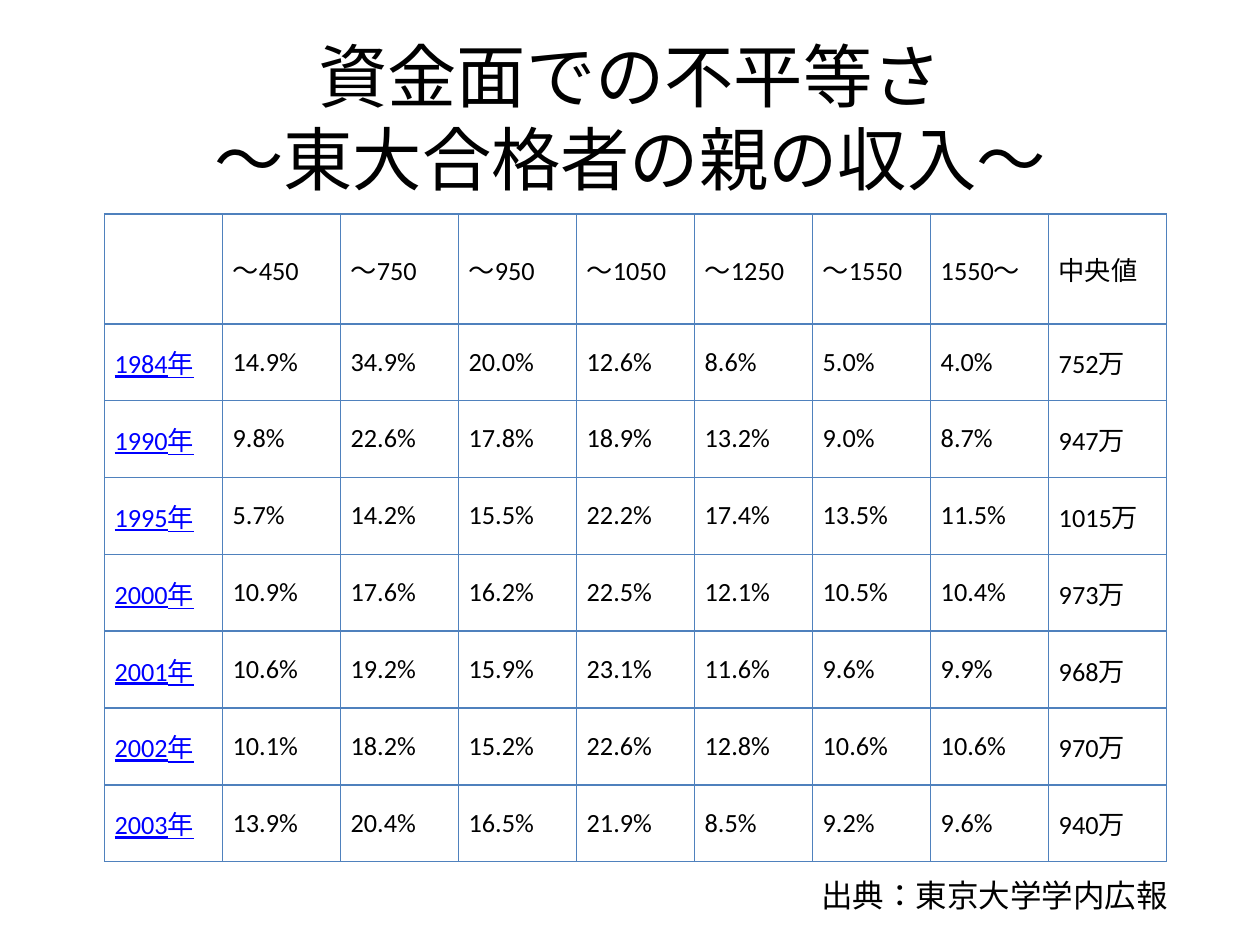
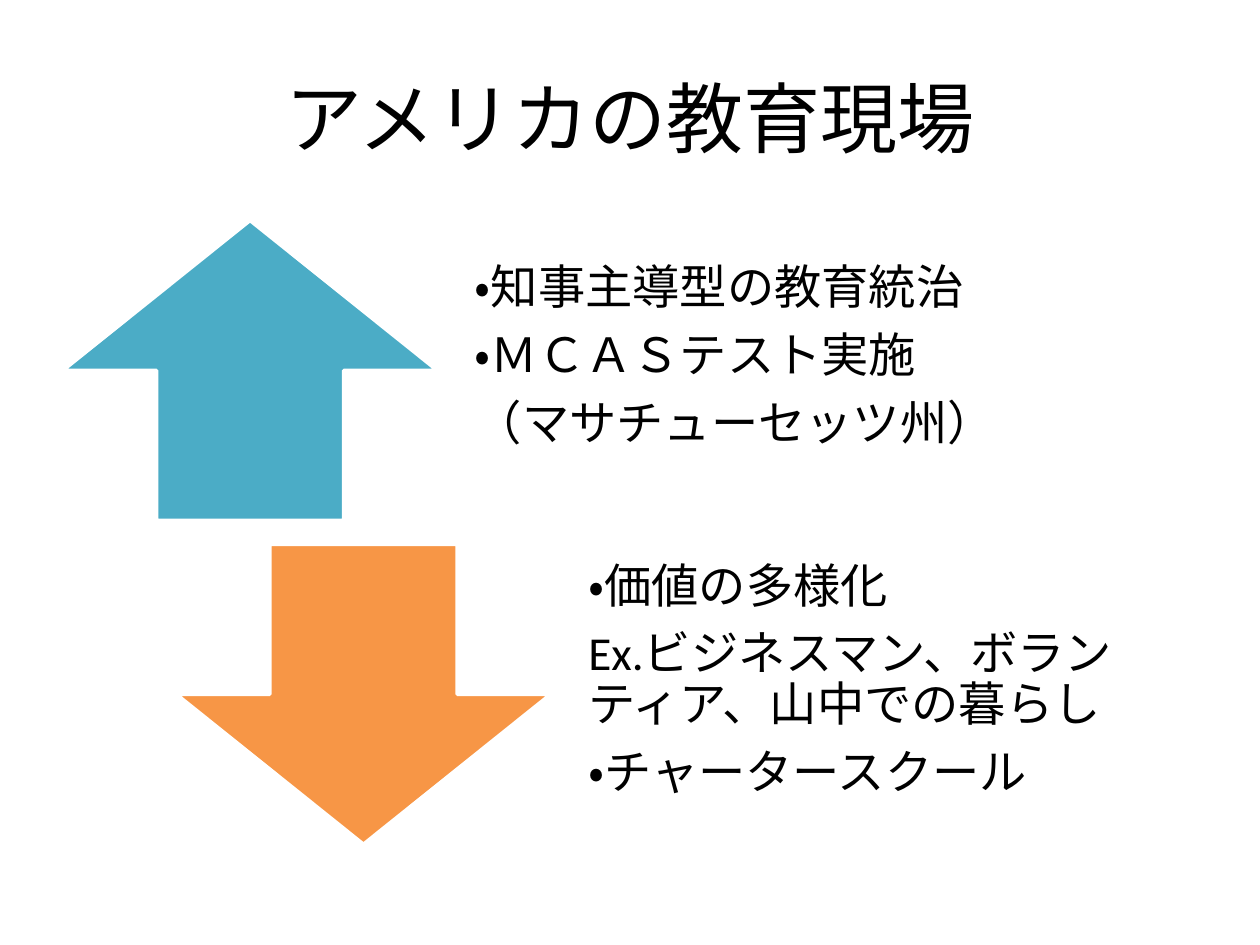
"""Build two slides on parental income and on education in the United States."""
from dataclasses import dataclass

from lxml import etree
from pptx import Presentation
from pptx import util as u
from pptx.dml.color import RGBColor
from pptx.enum import lang, shapes, text
from pptx.oxml import ns

COLORS = {
    "background": "FFFFFF",
    "text": "000000",
    "link": "0000FF",
    "grid": "4F81BD",
    "up": "4BACC6",
    "down": "F79646",
}
FONT = {"name": "Calibri", "language_id": lang.MSO_LANGUAGE_ID.JAPANESE}
CELL = {
    "vertical_anchor": text.MSO_ANCHOR.MIDDLE,
    "margin_left": u.Inches(0.08),
    "margin_right": u.Inches(0.08),
    "margin_top": u.Inches(0.04),
    "margin_bottom": u.Inches(0.04),
}
TITLE_FRAME = {"word_wrap": True, "vertical_anchor": text.MSO_ANCHOR.MIDDLE}
TITLE_PARAGRAPH = {"alignment": text.PP_ALIGN.CENTER}
POINTS_FRAME = {
    "word_wrap": True,
    "vertical_anchor": text.MSO_ANCHOR.MIDDLE,
    "margin_left": u.Inches(0.21),
    "margin_right": u.Inches(0.21),
    "margin_top": u.Inches(0),
    "margin_bottom": u.Inches(0.21),
}
POINTS_PARAGRAPH = {"line_spacing": 0.9, "space_after": u.Pt(9.45)}

INCOME = [
    ["", "～450", "～750", "～950", "～1050", "～1250", "～1550", "1550～", "中央値"],
    ["1984年", "14.9%", "34.9%", "20.0%", "12.6%", "8.6%", "5.0%", "4.0%", "752万"],
    ["1990年", "9.8%", "22.6%", "17.8%", "18.9%", "13.2%", "9.0%", "8.7%", "947万"],
    ["1995年", "5.7%", "14.2%", "15.5%", "22.2%", "17.4%", "13.5%", "11.5%", "1015万"],
    ["2000年", "10.9%", "17.6%", "16.2%", "22.5%", "12.1%", "10.5%", "10.4%", "973万"],
    ["2001年", "10.6%", "19.2%", "15.9%", "23.1%", "11.6%", "9.6%", "9.9%", "968万"],
    ["2002年", "10.1%", "18.2%", "15.2%", "22.6%", "12.8%", "10.6%", "10.6%", "970万"],
    ["2003年", "13.9%", "20.4%", "16.5%", "21.9%", "8.5%", "9.2%", "9.6%", "940万"],
]


@dataclass(frozen=True)
class Trend:
    """An arrow with the points that explain it."""

    arrow: shapes.MSO_SHAPE
    color: str
    points: list[str]


TRENDS = [
    Trend(shapes.MSO_SHAPE.UP_ARROW, "up",
          ["・知事主導型の教育統治", "・ＭＣＡＳテスト実施", "（マサチューセッツ州）"]),
    Trend(shapes.MSO_SHAPE.DOWN_ARROW, "down",
          ["・価値の多様化", "Ex.ビジネスマン、ボランティア、山中での暮らし",
           "・チャータースクール"]),
]


def rgb(color: str) -> RGBColor:
    """Look up a palette colour."""
    return RGBColor.from_string(COLORS[color])


def apply(target, values: dict) -> None:
    """Set every attribute in a dict of format values."""
    for attribute, value in values.items():
        setattr(target, attribute, value)


def write(paragraph, words: str, size: float, color: str = "text", **style) -> None:
    """Fill a paragraph and format its runs."""
    paragraph.text = words
    for run in paragraph.runs:
        apply(run.font, FONT | {"size": u.Pt(size)} | style)
        run.font.color.rgb = rgb(color)


def add_text(slide, box: tuple, lines: list[str], size: float,
             frame_format: dict, paragraph_format: dict) -> None:
    """Place a text box with one paragraph per line."""
    frame = slide.shapes.add_textbox(*map(u.Inches, box)).text_frame
    apply(frame, frame_format)
    for index, line in enumerate(lines):
        paragraph = frame.add_paragraph() if index else frame.paragraphs[0]
        apply(paragraph, paragraph_format)
        write(paragraph, line, size)


def add_titled_slide(deck, title: str, size: float):
    """Add a blank slide with the shared background and title style."""
    slide = deck.slides.add_slide(deck.slide_layouts[6])
    slide.background.fill.solid()
    slide.background.fill.fore_color.rgb = rgb("background")
    add_text(slide, (0.5, 0.3, 9, 1.25), [title], size, TITLE_FRAME, TITLE_PARAGRAPH)
    return slide


def draw_borders(cell) -> None:
    """Outline all four sides of a cell."""
    properties = cell._tc.get_or_add_tcPr()
    for index, side in enumerate(("lnL", "lnR", "lnT", "lnB")):
        line = etree.Element(ns.qn(f"a:{side}"), w=str(u.Pt(1)))
        fill = etree.SubElement(line, ns.qn("a:solidFill"))
        etree.SubElement(fill, ns.qn("a:srgbClr"), val=COLORS["grid"])
        properties.insert(index, line)


def add_income_table(slide) -> None:
    """Draw the table of income shares by year."""
    frame = slide.shapes.add_table(len(INCOME), len(INCOME[0]), *map(
        u.Inches, (0.83, 1.7, 8.43, 5.15)))
    table = frame.table
    apply(table, {"first_row": False, "horz_banding": False})
    for row_index, values in enumerate(INCOME):
        table.rows[row_index].height = u.Inches(0.61 if row_index else 0.87)
        for column_index, value in enumerate(values):
            cell = table.cell(row_index, column_index)
            apply(cell, CELL)
            cell.fill.background()
            draw_borders(cell)
            is_year = column_index == 0
            write(cell.text_frame.paragraphs[0], value, 15,
                  "link" if is_year else "text", underline=is_year)


def add_trend(slide, trend: Trend, step: int) -> None:
    """Draw an arrow and its points, shifted down and right by step."""
    left, top = 0.5 + 0.9 * step, 1.75 + 2.57 * step
    arrow = slide.shapes.add_shape(
        trend.arrow, *map(u.Inches, (left, top, 2.97, 2.38)))
    arrow.shadow.inherit = False
    arrow.fill.solid()
    arrow.fill.fore_color.rgb = rgb(trend.color)
    arrow.line.color.rgb = rgb("background")
    arrow.line.width = u.Pt(2)
    add_text(slide, (left + 3.06, top, 5.04, 2.38), trend.points, 27,
             POINTS_FRAME, POINTS_PARAGRAPH)


def main() -> None:
    """Build and save the slides."""
    deck = Presentation()
    apply(deck, {"slide_width": u.Inches(10), "slide_height": u.Inches(7.5)})

    income = add_titled_slide(deck, "資金面での不平等さ\v～東大合格者の親の収入～", 39.6)
    add_income_table(income)
    add_text(income, (6.42, 6.9, 3.08, 0.4), ["出典：東京大学学内広報"], 18,
             {"word_wrap": True}, {})

    america = add_titled_slide(deck, "アメリカの教育現場", 44)
    for step, trend in enumerate(TRENDS):
        add_trend(america, trend, step)

    deck.save("out.pptx")


if __name__ == "__main__":
    main()
